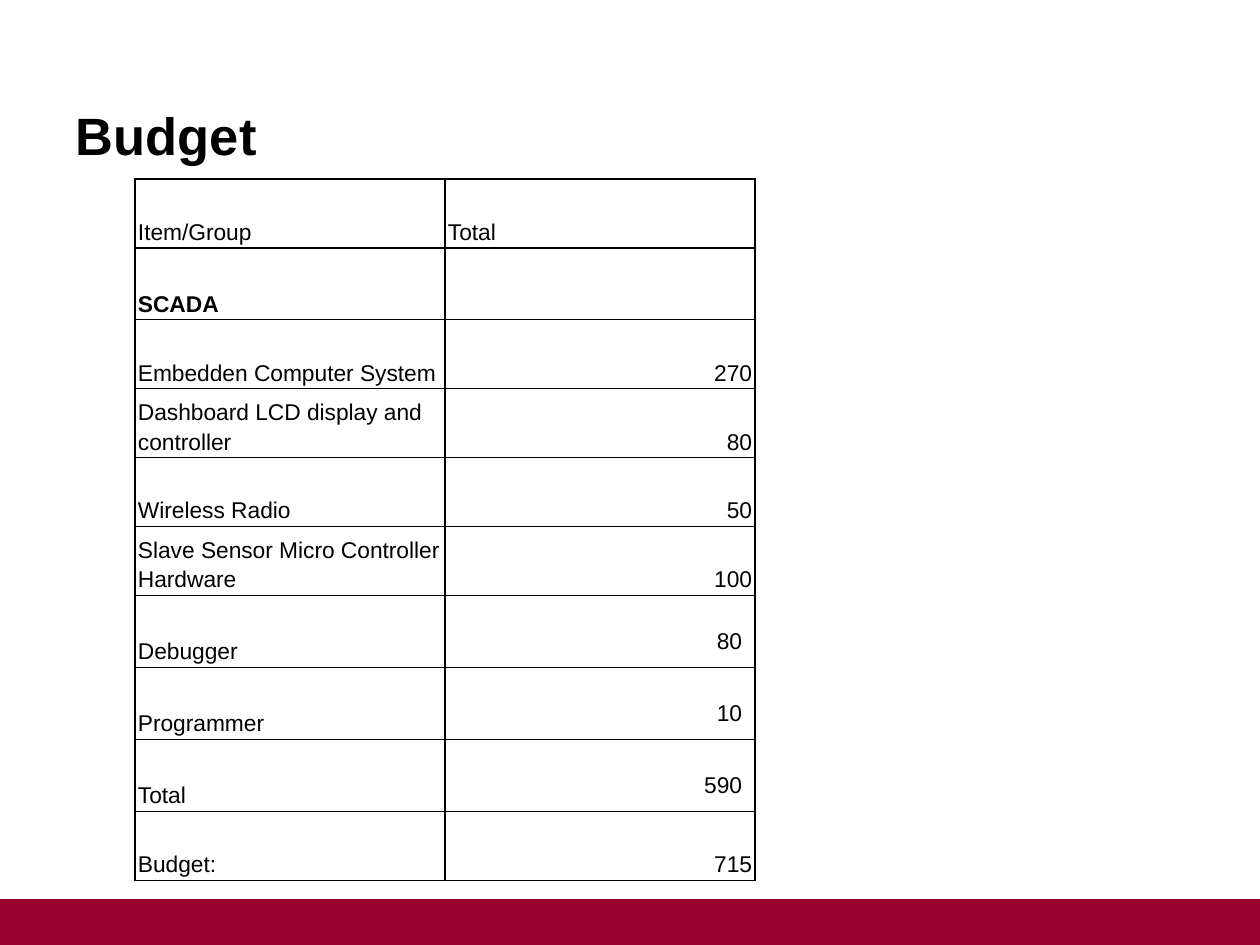
from lxml.etree import SubElement
from pptx import Presentation
from pptx.dml.color import RGBColor
from pptx.enum.shapes import MSO_SHAPE as Shape
from pptx.enum.text import MSO_ANCHOR as Anchor, PP_ALIGN as Align
from pptx.oxml.ns import qn
from pptx.util import Emu, Inches, Pt

BLACK = RGBColor(0x00, 0x00, 0x00)
MAROON = RGBColor(0x98, 0x00, 0x2E)
SCALE = Inches(1) / 126


def px(count):
    return Emu(round(count * SCALE))


def add_borders(cell):
    properties = cell._tc.get_or_add_tcPr()
    for side in ("lnL", "lnR", "lnT", "lnB"):
        line = SubElement(properties, qn(f"a:{side}"), w=str(Pt(0.75)))
        fill = SubElement(line, qn("a:solidFill"))
        SubElement(fill, qn("a:srgbClr"), val=str(BLACK))


prs = Presentation()
prs.slide_width, prs.slide_height = Inches(10), Inches(7.5)
slide = prs.slides.add_slide(prs.slide_layouts[5])

footer = slide.shapes.add_shape(Shape.RECTANGLE, 0, px(900), px(1260), px(45))
footer.shadow.inherit = False
footer.fill.solid()
footer.fill.fore_color.rgb = MAROON
footer.line.color.rgb = MAROON
footer.line.width = Pt(1.5)

title = slide.shapes.title
title.left, title.top, title.width, title.height = px(63), px(38), px(1134), px(141)
heading = title.text_frame
heading.text = "Budget"
heading.vertical_anchor = Anchor.BOTTOM
heading.margin_left = heading.margin_right = px(13)
heading.margin_top = heading.margin_bottom = px(13)
heading.paragraphs[0].alignment = Align.LEFT
font = heading.paragraphs[0].runs[0].font
font.name, font.size, font.bold = "Arial", Pt(30), True
font.color.rgb = BLACK

# item, total, row height, line spacing of item and total, inset of the total
SPACED, SINGLE = 1.15, 1.0
NARROW, WIDE = (3, 3), (13, 13)
budget_rows = [
    ("Item/Group", "Total", 69, SPACED, SPACED, NARROW),
    ("SCADA", "", 72, SPACED, SPACED, NARROW),
    ("Embedden Computer System", "270", 69, SPACED, SPACED, NARROW),
    ("Dashboard LCD display and controller", "80", 69, SPACED, SPACED, NARROW),
    ("Wireless Radio", "50", 69, SPACED, SPACED, NARROW),
    ("Slave Sensor Micro Controller Hardware", "100", 69, SPACED, SPACED, NARROW),
    ("Debugger", "80", 72, SINGLE, SINGLE, WIDE),
    ("Programmer", "10", 72, SINGLE, SINGLE, WIDE),
    ("Total", "590", 72, SINGLE, SINGLE, WIDE),
    ("Budget:", "715", 69, SINGLE, SPACED, NARROW),
]
table_height = sum(row[2] for row in budget_rows)
budget = slide.shapes.add_table(
    len(budget_rows), 2, px(135), px(179), px(620), px(table_height)
).table
budget.first_row = budget.horz_banding = False
for column in budget.columns:
    column.width = px(310)

for r, (item, total, height, item_spacing, total_spacing, inset) in enumerate(budget_rows):
    budget.rows[r].height = px(height)
    entries = [(item, item_spacing, NARROW), (total, total_spacing, inset)]
    for c, (entry, spacing, (side, end)) in enumerate(entries):
        cell = budget.cell(r, c)
        add_borders(cell)
        cell.fill.background()
        cell.vertical_anchor = Anchor.BOTTOM
        cell.margin_left = cell.margin_right = px(side)
        cell.margin_top = cell.margin_bottom = px(end)
        cell.text_frame.text = entry
        paragraph = cell.text_frame.paragraphs[0]
        paragraph.line_spacing = spacing
        paragraph.alignment = Align.RIGHT if entry.isdigit() else Align.LEFT
        paragraph.font.size = Pt(13)
        for run in paragraph.runs:
            run.font.name, run.font.size = "Arial", Pt(13)
            run.font.bold = entry == "SCADA"
            run.font.color.rgb = BLACK

prs.save("out.pptx")
